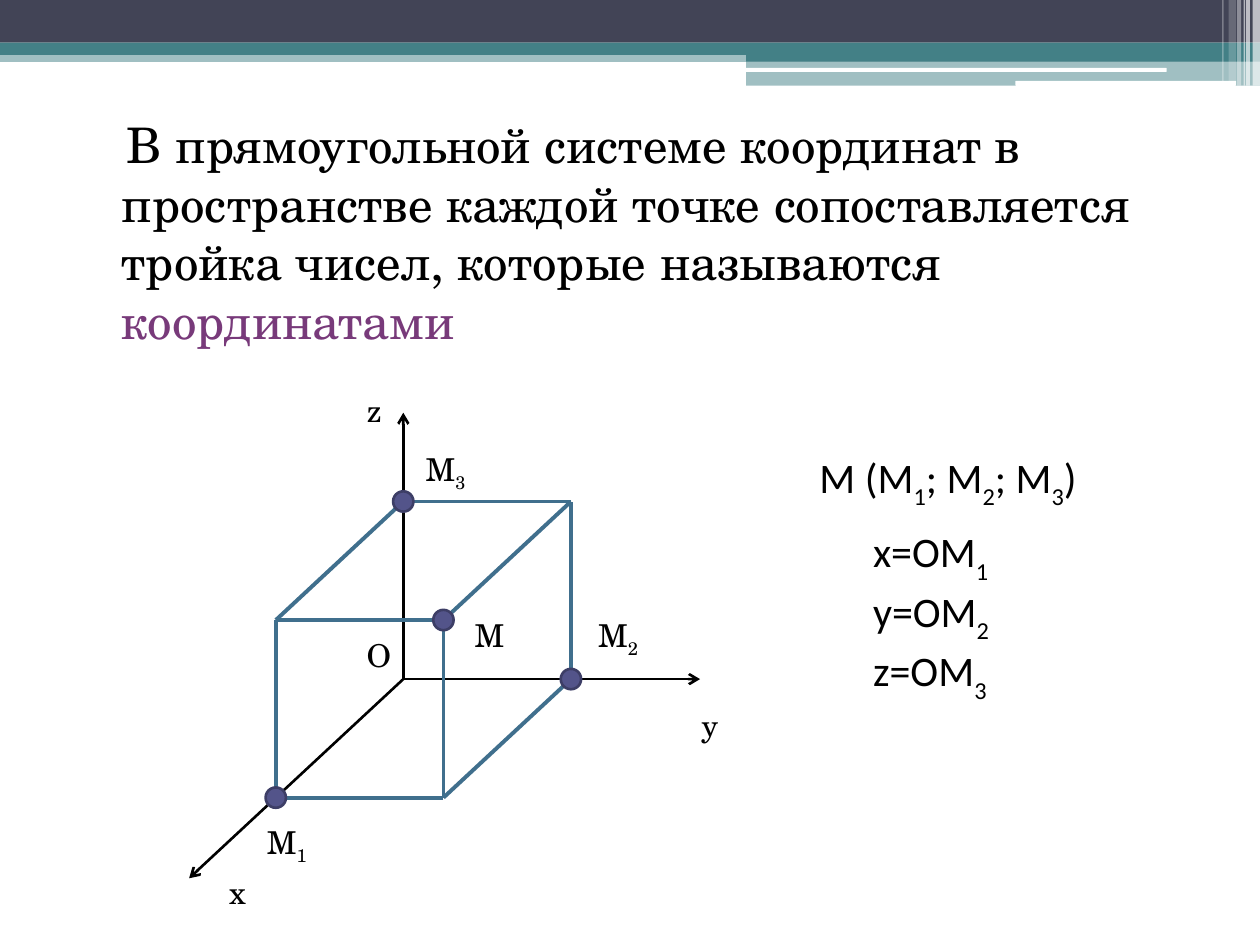
from dataclasses import dataclass
from itertools import combinations, product

from lxml.etree import SubElement
from pptx import Presentation
from pptx.dml.color import RGBColor
from pptx.enum.shapes import MSO_CONNECTOR, MSO_SHAPE
from pptx.enum.text import MSO_ANCHOR
from pptx.oxml.ns import qn
from pptx.util import Cm, Pt


@dataclass(frozen=True)
class Theme:
    white: str = "FFFFFF"
    black: str = "000000"
    navy: str = "424456"
    teal: str = "438086"
    plum: str = "783A7A"
    edge: str = "406F8D"
    dot: str = "53548A"
    rim: str = "3D3E66"
    serif: str = "TeX Gyre Schola"
    sans: str = "Calibri"
    body: int = 28
    math: int = 24
    label: int = 18


@dataclass(frozen=True)
class Band:
    left: float
    top: float
    width: float
    height: float
    color: str
    alpha: int = 100
    kind: MSO_SHAPE = MSO_SHAPE.RECTANGLE


@dataclass(frozen=True)
class Label:
    text: str
    left: float
    top: float
    width: float


Node = tuple[float, float, float]
THEME = Theme()
ORIGIN = (8.13, 13.69)
BASIS = ((-2.57, 2.39), (3.38, 0), (0, -3.58))
ROUND = MSO_SHAPE.ROUNDED_RECTANGLE

BANDS = [
    Band(0, 1.02, 25.4, 0.23, THEME.teal, 50),
    Band(0, 0, 25.4, 0.86, THEME.navy),
    Band(0, 0.86, 25.4, 0.25, THEME.teal),
    Band(15.04, 0.99, 10.36, 0.25, THEME.teal),
    Band(15.04, 1.22, 10.36, 0.51, THEME.teal, 50),
    Band(15.01, 1.37, 8.51, 0.08, THEME.white, kind=ROUND),
    Band(20.47, 1.63, 4.45, 0.1, THEME.white, kind=ROUND),
    Band(25.25, 0, 0.15, 1.73, THEME.white, 65),
    Band(25.12, 0, 0.08, 1.73, THEME.white, 65),
    Band(25.07, 0, 0.03, 1.73, THEME.white, 60),
    Band(24.94, 0, 0.08, 1.73, THEME.white, 40),
    Band(24.77, 0, 0.15, 1.63, THEME.white, 20),
    Band(24.64, 0, 0.03, 1.63, THEME.white, 30),
]
AXES = [(0, 0, 1.5), (1.68, 0, 0), (0, 1.77, 0)]
DOTS = [(1, 1, 1), (0, 0, 1), (1, 0, 0), (0, 1, 0)]
LABELS = [
    Label("z", 7.14, 7.75, 0.99),
    Label("x", 4.37, 17.48, 0.79),
    Label("y", 13.89, 14.1, 0.58),
    Label("M|1|", 5.13, 16.46, 1.6),
    Label("M|2|", 11.81, 12.29, 1.45),
    Label("M|3|", 8.33, 8.94, 1.45),
    Label("M", 9.32, 12.29, 1.12),
    Label("O", 7.14, 12.7, 0.58),
]


def rgb(code: str) -> RGBColor:
    return RGBColor.from_string(code)


def project(node: Node) -> tuple[float, float]:
    return tuple(ORIGIN[i] + sum(n * b[i] for n, b in zip(node, BASIS))
                 for i in range(2))


def draw_band(slide, band: Band) -> None:
    shape = slide.shapes.add_shape(
        band.kind, Cm(band.left), Cm(band.top), Cm(band.width), Cm(band.height))
    shape.shadow.inherit = False
    shape.line.fill.background()
    shape.fill.solid()
    shape.fill.fore_color.rgb = rgb(band.color)
    if band.alpha < 100:
        color = shape.fill._xPr.find(".//" + qn("a:srgbClr"))
        SubElement(color, qn("a:alpha"), val=str(band.alpha * 1000))


def draw_line(slide, start: Node, end: Node, color: str, width: float,
              arrow: bool = False) -> None:
    (x1, y1), (x2, y2) = project(start), project(end)
    line = slide.shapes.add_connector(
        MSO_CONNECTOR.STRAIGHT, Cm(x1), Cm(y1), Cm(x2), Cm(y2))
    line.line.color.rgb = rgb(color)
    line.line.width = Pt(width)
    if arrow:
        SubElement(line.line._get_or_add_ln(), qn("a:tailEnd"), type="arrow")
    SubElement(line._element.spPr, qn("a:effectLst"))


def draw_dot(slide, node: Node, size: float = 0.41) -> None:
    x, y = project(node)
    dot = slide.shapes.add_shape(
        MSO_SHAPE.FLOWCHART_CONNECTOR, Cm(x - size / 2), Cm(y - size / 2),
        Cm(size), Cm(size))
    dot.shadow.inherit = False
    dot.fill.solid()
    dot.fill.fore_color.rgb = rgb(THEME.dot)
    dot.line.color.rgb = rgb(THEME.rim)
    dot.line.width = Pt(1.5)


def add_frame(slide, left: float, top: float, width: float, height: float):
    frame = slide.shapes.add_textbox(
        Cm(left), Cm(top), Cm(width), Cm(height)).text_frame
    frame.word_wrap = True
    return frame


def style(para, font: str, size: int) -> None:
    para.font.name = font
    para.font.size = Pt(size)
    para.font.color.rgb = rgb(THEME.black)


def indent(para, left: float, first: float = 0) -> None:
    props = para._p.get_or_add_pPr()
    props.set("marL", str(Cm(left)))
    props.set("indent", str(Cm(first)))


def write(para, text: str, drop: int) -> None:
    for i, part in enumerate(text.split("|")):
        if part:
            run = para.add_run()
            run.text = part
            if i % 2:
                run._r.get_or_add_rPr().set("baseline", str(-drop * 1000))


def draw_label(slide, label: Label) -> None:
    para = add_frame(slide, label.left, label.top, label.width, 1.02).paragraphs[0]
    style(para, THEME.serif, THEME.label)
    write(para, label.text, 25)


def draw_body(slide) -> None:
    para = add_frame(slide, 1.19, 2.18, 23.83, 5.94).paragraphs[0]
    para.space_before = Pt(3)
    indent(para, 1.02, 0.1)
    style(para, THEME.serif, THEME.body)
    para.add_run().text = ("В прямоугольной системе координат в пространстве "
                           "каждой точке сопоставляется тройка чисел, "
                           "которые называются ")
    term = para.add_run()
    term.text = "координатами"
    term.font.color.rgb = rgb(THEME.plum)


def draw_math(slide) -> None:
    frame = add_frame(slide, 16.08, 9.32, 8.94, 4.65)
    frame.vertical_anchor = MSO_ANCHOR.MIDDLE
    rows = ["M (M|1|; M|2|; M|3|)", "x=OM|1|", "y=OM|2|", "z=OM|3|"]
    for i, row in enumerate(rows):
        para = frame.add_paragraph() if i else frame.paragraphs[0]
        style(para, THEME.sans, THEME.math)
        indent(para, 1.27 if i else 0.19)
        if i == 1:
            para.space_before = Pt(8.5)
        write(para, row, 30)


def main() -> None:
    deck = Presentation()
    deck.slide_width, deck.slide_height = Cm(25.4), Cm(19.05)
    slide = deck.slides.add_slide(deck.slide_layouts[6])
    for band in BANDS:
        draw_band(slide, band)
    draw_body(slide)
    for tip in AXES:
        draw_line(slide, (0, 0, 0), tip, THEME.black, 1.5, arrow=True)
    for a, b in combinations(product((0, 1), repeat=3), 2):
        if any(a) and sum(p != q for p, q in zip(a, b)) == 1:
            draw_line(slide, a, b, THEME.edge, 2.25)
    for node in DOTS:
        draw_dot(slide, node)
    for label in LABELS:
        draw_label(slide, label)
    draw_math(slide)
    deck.save("out.pptx")


if __name__ == "__main__":
    main()
